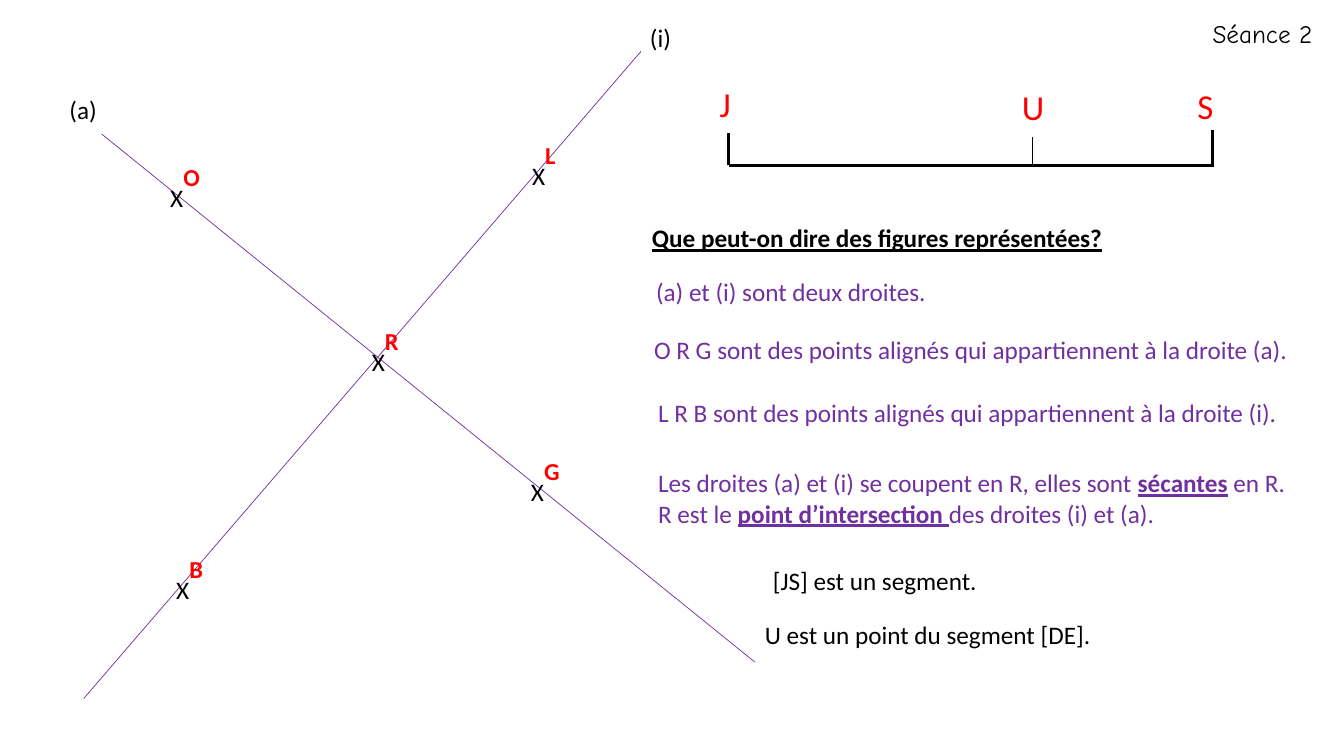
from dataclasses import dataclass

from lxml.etree import SubElement
from pptx import Presentation
from pptx.dml.color import RGBColor
from pptx.enum.shapes import MSO_CONNECTOR
from pptx.enum.text import MSO_AUTO_SIZE
from pptx.oxml.ns import qn
from pptx.util import Pt


@dataclass(frozen=True)
class Theme:
    black: RGBColor = RGBColor(0x00, 0x00, 0x00)
    red: RGBColor = RGBColor(0xFF, 0x00, 0x00)
    purple: RGBColor = RGBColor(0x70, 0x30, 0xA0)
    body_font: str = "Calibri"
    session_font: str = "Comic Neue"
    body_size: float = 18
    segment_size: float = 25
    point_size: float = 30
    thin: float = 0.5
    thick: float = 2.25


class GeometrySlide:
    def __init__(self, presentation, theme):
        self.theme = theme
        self.slide = presentation.slides.add_slide(presentation.slide_layouts[6])

    def line(self, start, end, color, width):
        connector = self.slide.shapes.add_connector(
            MSO_CONNECTOR.STRAIGHT, *(Pt(value) for value in (*start, *end)))
        connector.line.color.rgb = color
        connector.line.width = Pt(width)
        SubElement(connector._element.spPr, qn("a:effectLst"))

    def text(self, box, paragraphs, color, size=None, font=None, wrap=False):
        """Add text; each paragraph is a list of strings, every second one emphasised."""
        frame = self.slide.shapes.add_textbox(*(Pt(value) for value in box)).text_frame
        frame.word_wrap = wrap
        frame.auto_size = MSO_AUTO_SIZE.SHAPE_TO_FIT_TEXT
        for index, pieces in enumerate(paragraphs):
            paragraph = frame.add_paragraph() if index else frame.paragraphs[0]
            paragraph.font.name = font or self.theme.body_font
            paragraph.font.size = Pt(size or self.theme.body_size)
            paragraph.font.color.rgb = color
            for position, piece in enumerate(pieces):
                if piece:
                    run = paragraph.add_run()
                    run.text = piece
                    if position % 2:
                        run.font.bold = run.font.underline = True
        return frame

    def point(self, name, left, top, width, wrap=False):
        """Mark a point with a cross and its raised name."""
        frame = self.text((left, top, width, 43.9), [["X"]], self.theme.black, wrap=wrap)
        label = frame.paragraphs[0].add_run()
        label.text = name
        label.font.size = Pt(self.theme.point_size)
        label.font.bold = True
        label.font.color.rgb = self.theme.red
        label._r.get_or_add_rPr().set("baseline", "50000")


def main():
    presentation = Presentation()
    presentation.slide_width, presentation.slide_height = Pt(960), Pt(540)
    theme = Theme()
    page = GeometrySlide(presentation, theme)
    line_height = 28.8

    page.line((457.9, 36.7), (59.8, 499), theme.purple, theme.thin)
    page.line((72.7, 95.8), (539.3, 473), theme.purple, theme.thin)
    for name, left, top, width, wrap in (
        ("L", 373, 96.5, 32.4, False),
        ("R", 258.5, 229.7, 35.3, False),
        ("B", 118.8, 392.4, 35.3, False),
        ("O", 114.5, 112.3, 42.5, True),
        ("G", 372.2, 322.6, 36.7, False),
    ):
        page.point(name, left, top, width, wrap)

    base = 118.1
    page.line((520.6, base), (866.9, base), theme.black, theme.thick)
    for name, tick, tick_top, width, left, top, label_width in (
        ("J", 520.6, 95, theme.thick, 506.9, 55.4, 22.3),
        ("U", 737.3, 97.9, theme.thin, 722.9, 57.6, 31),
        ("S", 866.2, 92.9, theme.thick, 848.2, 56.9, 25.9),
    ):
        page.line((tick, base), (tick, tick_top), theme.black, width)
        page.text((left, top, label_width, 37.4), [[name]], theme.red, theme.segment_size)

    page.text((458.6, 155.5, 501.1, line_height),
              [["", "Que peut-on dire des figures représentées?"]], theme.black, wrap=True)
    page.text((461.5, 193.7, 498.2, line_height),
              [["(a) et (i) sont deux droites."]], theme.purple, wrap=True)
    page.text((463, 330.5, 468, 51.1), [
        ["Les droites (a) et (i) se coupent en R, elles sont ", "sécantes", " en R."],
        ["R est le ", "point d’intersection ", "des droites (i) et (a)."],
    ], theme.purple)
    for words, left, top, width, color in (
        ("(a)", 42.5, 64.1, 34.6, theme.black),
        ("(i)", 457.2, 12.2, 29.5, theme.black),
        ("O R G sont des points alignés qui appartiennent à la droite (a).",
         460.1, 235.4, 468.7, theme.purple),
        ("L R B sont des points alignés qui appartiennent à la droite (i).",
         463, 280.1, 457.9, theme.purple),
        ("[JS] est un segment.", 545, 400.3, 162, theme.black),
        ("U est un point du segment [DE].", 539.3, 438.5, 249.8, theme.black),
    ):
        page.text((left, top, width, line_height), [[words]], color)
    page.text((859, 9.4, 97.2, line_height), [["Séance 2"]], theme.black,
              font=theme.session_font)

    presentation.save("out.pptx")


if __name__ == "__main__":
    main()
